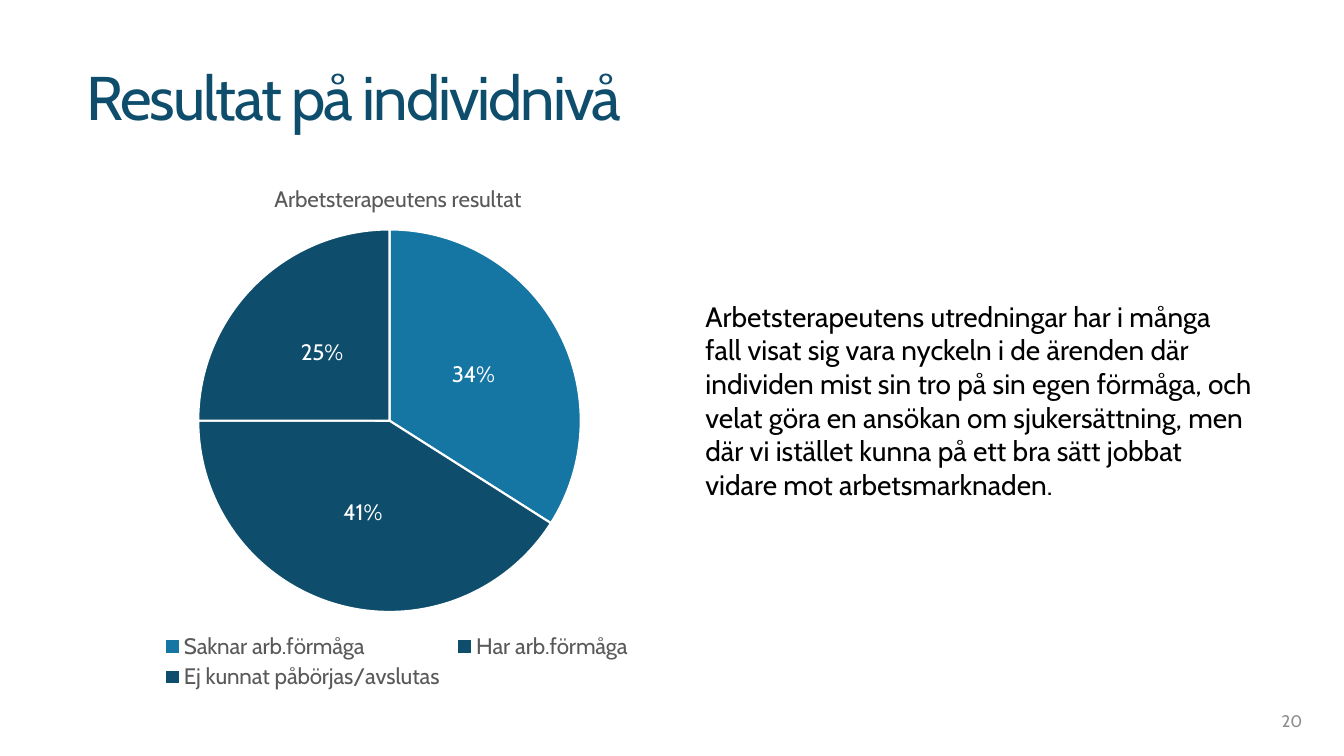
from dataclasses import dataclass

from lxml.etree import SubElement
from pptx import Presentation
from pptx.chart.data import CategoryChartData
from pptx.dml.color import RGBColor
from pptx.enum.chart import XL_CHART_TYPE, XL_LABEL_POSITION, XL_LEGEND_POSITION
from pptx.enum.text import MSO_ANCHOR, PP_ALIGN
from pptx.oxml.ns import qn
from pptx.slide import Slide
from pptx.text.text import Font
from pptx.util import Pt

FONT = "Cabin"
NAVY, BLUE, GREY = "0E4E6C", "1575A3", "595959"


@dataclass
class TextBlock:
    text: str
    left: float
    top: float
    width: float
    height: float
    size: float
    color: str
    anchor: MSO_ANCHOR = MSO_ANCHOR.TOP
    align: PP_ALIGN = PP_ALIGN.LEFT
    line_spacing: float = 1.0
    letter_spacing: float = 0


@dataclass
class Slice:
    category: str
    share: float
    color: str


TEXT_BLOCKS = [
    TextBlock("Resultat på individnivå", 54.72, 40.32, 596.88, 59.04, 44, NAVY,
              anchor=MSO_ANCHOR.BOTTOM, line_spacing=0.9, letter_spacing=-1.5),
    TextBlock("Arbetsterapeutens utredningar har i många fall visat sig vara nyckeln "
              "i de ärenden där individen mist sin tro på sin egen förmåga, och velat "
              "göra en ansökan om sjukersättning, men där vi istället kunna på ett bra "
              "sätt jobbat vidare mot arbetsmarknaden.",
              496.8, 210.24, 404.64, 152.64, 20, "000000"),
    TextBlock("20", 721.44, 500.4, 216, 28.8, 12, "8C8C8C",
              anchor=MSO_ANCHOR.MIDDLE, align=PP_ALIGN.RIGHT),
]

SLICES = [
    Slice("Saknar arb.förmåga", 0.34, BLUE),
    Slice("Har arb.förmåga", 0.41, NAVY),
    Slice("Ej kunnat påbörjas/avslutas", 0.25, NAVY),
]


def rgb(color: str) -> RGBColor:
    return RGBColor.from_string(color)


def style_font(font: Font, size: float, color: str) -> None:
    font.name = FONT
    font.size = Pt(size)
    font.bold = False
    font.color.rgb = rgb(color)


def add_text(slide: Slide, block: TextBlock) -> None:
    box = slide.shapes.add_textbox(
        Pt(block.left), Pt(block.top), Pt(block.width), Pt(block.height))
    frame = box.text_frame
    frame.word_wrap = True
    frame.vertical_anchor = block.anchor
    paragraph = frame.paragraphs[0]
    paragraph.alignment = block.align
    paragraph.line_spacing = block.line_spacing
    style_font(paragraph.font, block.size, block.color)
    run = paragraph.add_run()
    run.text = block.text
    if block.letter_spacing:
        run._r.get_or_add_rPr().set("spc", str(round(block.letter_spacing * 100)))


def place(element, after: str, **settings: object) -> None:
    """Give a chart part a manual layout, put after its child named by tag."""
    for old in element.findall(qn("c:layout")):
        element.remove(old)
    layout = SubElement(element, qn("c:layout"))
    manual = SubElement(layout, qn("c:manualLayout"))
    for tag, value in settings.items():
        SubElement(manual, qn(f"c:{tag}")).set("val", str(value))
    previous = element.find(qn(after)) if after else None
    if previous is None:
        element.insert(0, layout)
    else:
        previous.addnext(layout)


def add_result_pie(slide: Slide) -> None:
    data = CategoryChartData(number_format="0%")
    data.categories = [item.category for item in SLICES]
    data.add_series("Series 1", [item.share for item in SLICES])
    chart = slide.shapes.add_chart(
        XL_CHART_TYPE.PIE, Pt(23.04), Pt(113.04), Pt(515.52), Pt(386.64), data).chart
    style_font(chart.font, 10, "000000")

    chart.has_title = True
    title = chart.chart_title.text_frame.paragraphs[0]
    title.text = "Arbetsterapeutens resultat"
    style_font(title.font, 16, GREY)

    chart.has_legend = True
    chart.legend.position = XL_LEGEND_POSITION.BOTTOM
    chart.legend.include_in_layout = False
    style_font(chart.legend.font, 16, GREY)

    plot = chart.plots[0]
    plot.vary_by_categories = True
    plot.has_data_labels = True
    labels = plot.data_labels
    labels.show_value = True
    labels.show_percentage = False
    labels.number_format = "0%"
    labels.number_format_is_linked = False
    labels.position = XL_LABEL_POSITION.CENTER
    style_font(labels.font, 16, "FFFFFF")

    for index, item in enumerate(SLICES):
        point_format = plot.series[0].points[index].format
        point_format.fill.solid()
        point_format.fill.fore_color.rgb = rgb(item.color)
        point_format.line.color.rgb = rgb("FFFFFF")
        point_format.line.width = Pt(1.5)

    edges = {"xMode": "edge", "yMode": "edge"}
    place(chart.chart_title._element, "c:tx", **edges, x=0.33, y=0.04)
    place(chart.legend._element, "c:legendPos", **edges, x=0.17, y=0.87, w=0.67, h=0.12)
    place(chart._chartSpace.chart.plotArea, "", layoutTarget="inner", **edges,
          x=0.23, y=0.13, w=0.53, h=0.71)


def main() -> None:
    presentation = Presentation()
    presentation.slide_width, presentation.slide_height = Pt(960), Pt(540)
    slide = presentation.slides.add_slide(presentation.slide_layouts[6])
    add_result_pie(slide)
    for block in TEXT_BLOCKS:
        add_text(slide, block)
    presentation.save("out.pptx")


if __name__ == "__main__":
    main()
